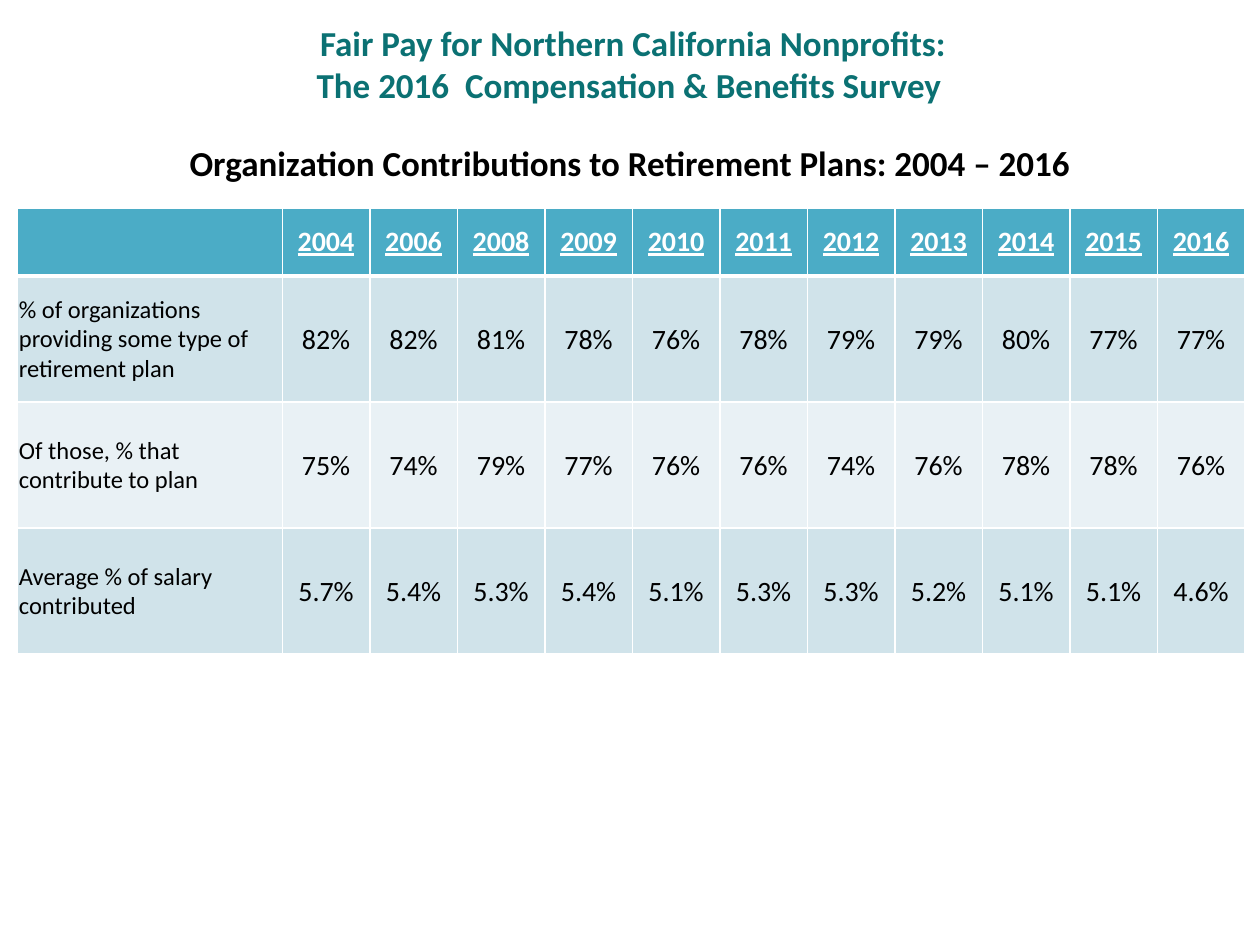
"""Build the slide on organization contributions to retirement plans."""
from lxml.etree import SubElement
from pptx import Presentation
from pptx.dml.color import RGBColor
from pptx.enum.text import MSO_ANCHOR, PP_ALIGN
from pptx.oxml.ns import qn
from pptx.util import Inches, Pt


def style(p, size, color, bold=False, align=PP_ALIGN.CENTER):
    p.alignment = align
    p.font.name = "Calibri"
    p.font.size = Pt(size)
    p.font.bold = bold
    p.font.color.rgb = RGBColor.from_string(color)


def add_border(cell, side, width, color):
    ln = SubElement(cell._tc.get_or_add_tcPr(), qn(f"a:{side}"), w=str(Pt(width)))
    SubElement(SubElement(ln, qn("a:solidFill")), qn("a:srgbClr"), val=color)


YEARS = ["2004", "2006", "2008", "2009", "2010", "2011", "2012", "2013", "2014", "2015", "2016"]
ROWS = [
    ["", *YEARS],
    ["% of organizations providing some type of retirement plan",
     "82%", "82%", "81%", "78%", "76%", "78%", "79%", "79%", "80%", "77%", "77%"],
    ["Of those, % that contribute to plan",
     "75%", "74%", "79%", "77%", "76%", "76%", "74%", "76%", "78%", "78%", "76%"],
    ["Average % of salary contributed",
     "5.7%", "5.4%", "5.3%", "5.4%", "5.1%", "5.3%", "5.3%", "5.2%", "5.1%", "5.1%", "4.6%"],
]
FILLS = ["4BACC6", "D0E3EA", "E9F1F5", "D0E3EA"]
HEIGHTS = [0.54, 1, 1, 1]
LABEL_WIDTH, TABLE_WIDTH = 2.1, 9.74

prs = Presentation()
prs.slide_width, prs.slide_height = Inches(10), Inches(7.5)
s = prs.slides.add_slide(prs.slide_layouts[5])

title = s.shapes.title
title.left, title.top = Inches(1.07), Inches(0.17)
title.width, title.height = Inches(7.91), Inches(0.67)
tf = title.text_frame
tf.vertical_anchor = MSO_ANCHOR.MIDDLE
tf.text = "Fair Pay for Northern California Nonprofits:\nThe 2016  Compensation & Benefits Survey "
for p in tf.paragraphs:
    style(p, 20, "0B7173", bold=True)

subtitle = s.shapes.add_textbox(Inches(0), Inches(1.07), Inches(10), Inches(0.37))
tf = subtitle.text_frame
tf.word_wrap = True
tf.text = "Organization Contributions to Retirement Plans: 2004 – 2016"
style(tf.paragraphs[0], 20, "000000", bold=True)

table = s.shapes.add_table(len(ROWS), len(ROWS[0]), Inches(0.14), Inches(1.65),
                           Inches(TABLE_WIDTH), Inches(sum(HEIGHTS))).table
for c, column in enumerate(table.columns):
    column.width = Inches((TABLE_WIDTH - LABEL_WIDTH) / len(YEARS) if c else LABEL_WIDTH)

for r, values in enumerate(ROWS):
    table.rows[r].height = Inches(HEIGHTS[r])
    for c, value in enumerate(values):
        cell = table.cell(r, c)
        cell.text = value
        cell.vertical_anchor = MSO_ANCHOR.MIDDLE
        p = cell.text_frame.paragraphs[0]
        if r == 0:
            style(p, 16, "FFFFFF", bold=True)
            p.font.underline = True
        else:
            cell.margin_left = cell.margin_right = cell.margin_top = Inches(0.01)
            cell.margin_bottom = 0
            if c == 0:
                style(p, 14, "000000", align=PP_ALIGN.LEFT)
            else:
                style(p, 16, "000000")
        widths = {"lnL": 1, "lnR": 1, "lnT": 3 if r == 1 else 1, "lnB": 3 if r == 0 else 1}
        for side, width in widths.items():
            add_border(cell, side, width, "FFFFFF")
        cell.fill.solid()
        cell.fill.fore_color.rgb = RGBColor.from_string(FILLS[r])

prs.save("out.pptx")
